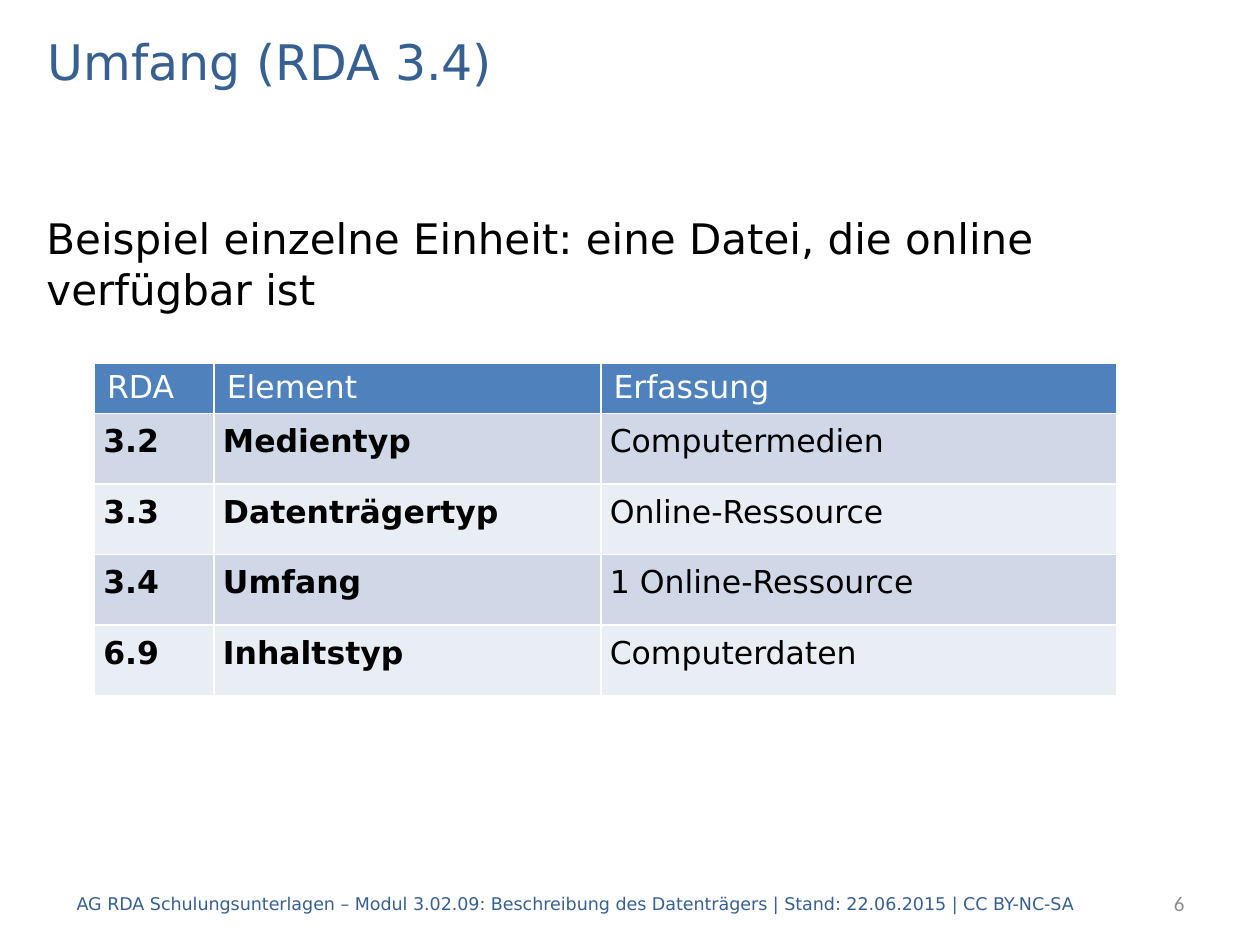
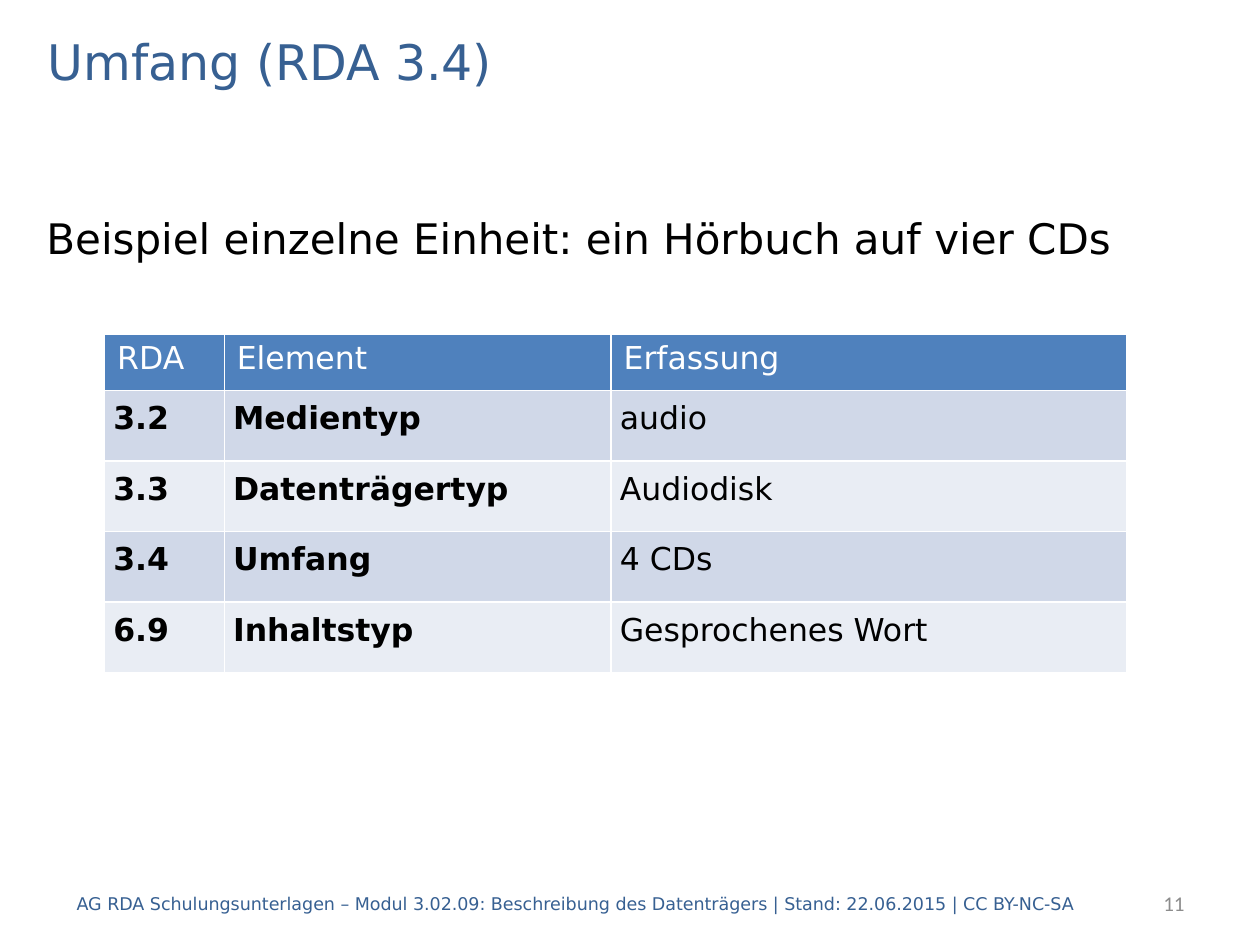
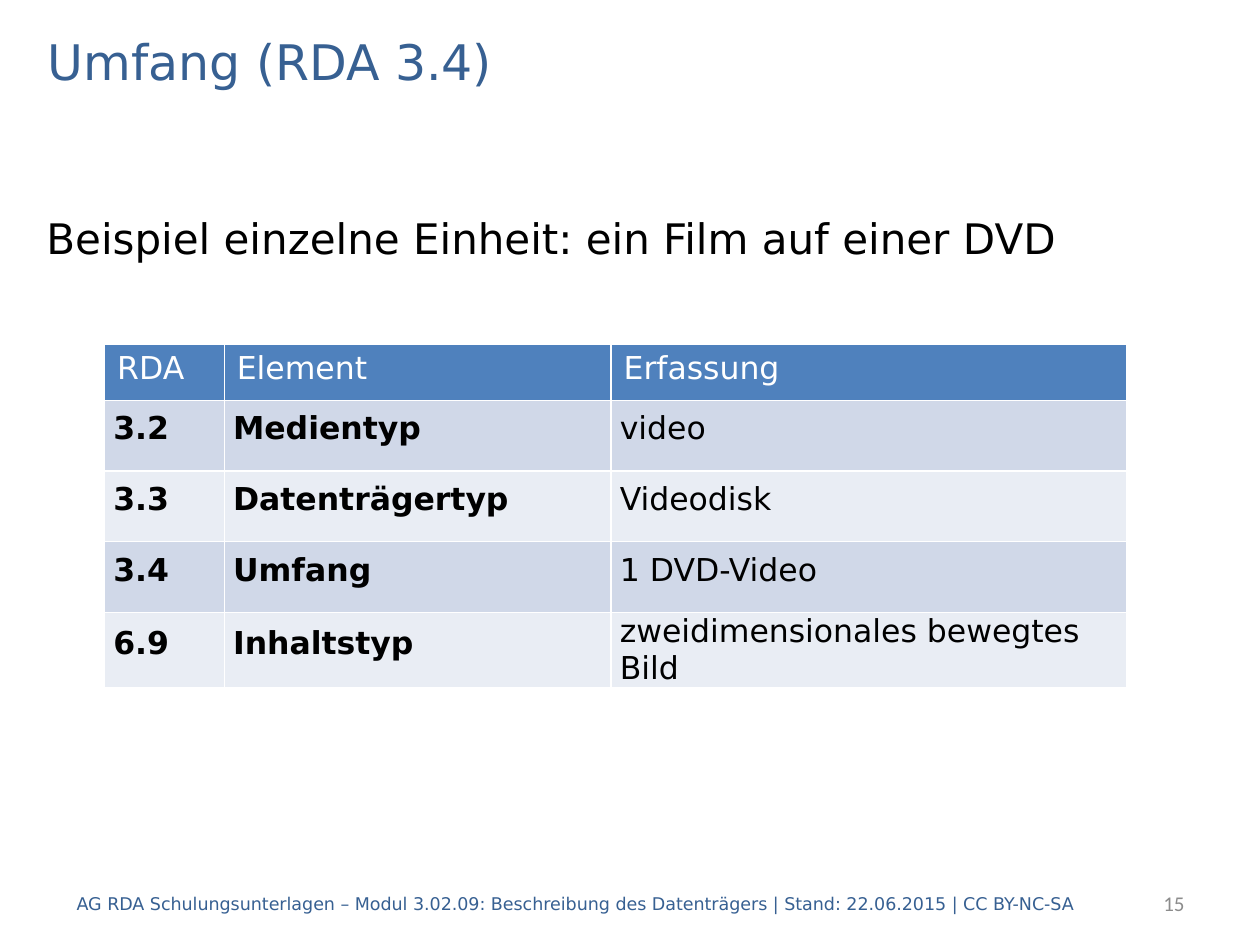
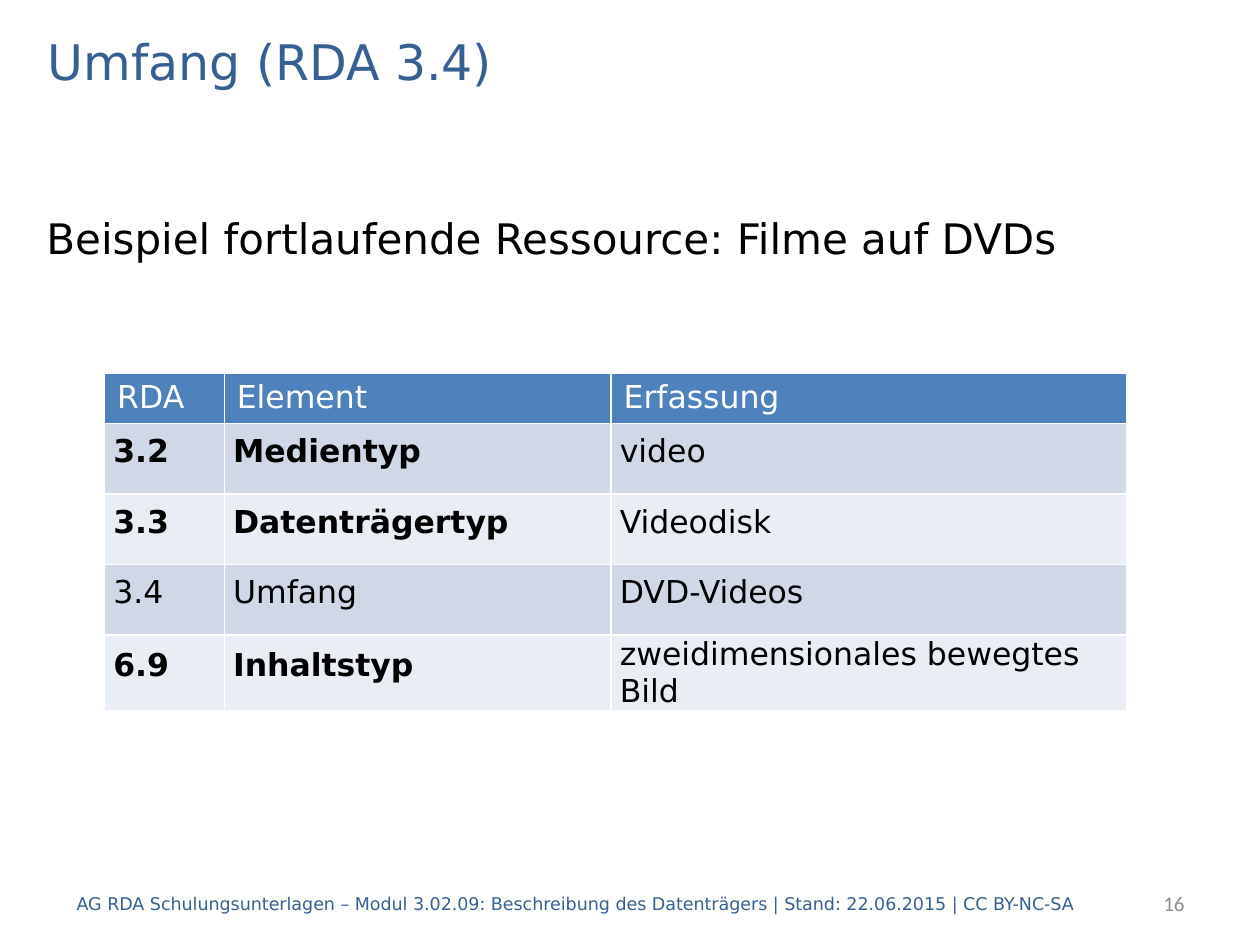
from lxml.etree import SubElement
from pptx import Presentation
from pptx.dml.color import RGBColor
from pptx.enum.text import MSO_ANCHOR as Anchor, MSO_AUTO_SIZE as AutoSize, PP_ALIGN as Align
from pptx.oxml.ns import qn
from pptx.util import Inches, Pt

TITLE = "Umfang (RDA 3.4)"
FOOTER = ("AG RDA Schulungsunterlagen – Modul 3.02.09: Beschreibung des Datenträgers"
          " | Stand: 22.06.2015 | CC BY-NC-SA")
HEADINGS = ("RDA", "Element", "Erfassung")
ELEMENTS = (("3.2", "Medientyp"), ("3.3", "Datenträgertyp"),
            ("3.4", "Umfang"), ("6.9", "Inhaltstyp"))
COLUMN_WIDTHS = (0.95, 3.07, 4.09)
ROW_HEIGHT = 0.56
MOVING_IMAGE = "zweidimensionales bewegtes Bild"

EXAMPLES = (
    dict(number=6, topic="Beispiel einzelne Einheit: eine Datei, die online verfügbar ist",
         left=0.75, top=2.88, header_height=0.39,
         entries=("Computermedien", "Online-Ressource", "1 Online-Ressource", "Computerdaten")),
    dict(number=11, topic="Beispiel einzelne Einheit: ein Hörbuch auf vier CDs",
         left=0.83, top=2.65, header_height=0.45,
         entries=("audio", "Audiodisk", "4 CDs", "Gesprochenes Wort")),
    dict(number=15, topic="Beispiel einzelne Einheit: ein Film auf einer DVD",
         left=0.83, top=2.73, header_height=0.45,
         entries=("video", "Videodisk", "1 DVD-Video", MOVING_IMAGE)),
    dict(number=16, topic="Beispiel fortlaufende Ressource: Filme auf DVDs",
         left=0.83, top=2.96, header_height=0.39, optional=("3.4",),
         entries=("video", "Videodisk", "DVD-Videos", MOVING_IMAGE)),
)


def rgb(value):
    """Turn a hex string into a colour."""
    return RGBColor.from_string(value)


class Deck:
    """Hold the shared style and the slide being built."""

    FONT, NUMBER_FONT = "DejaVu Sans", "Calibri"
    ACCENT, BODY, WHITE, MUTED = "376092", "000000", "FFFFFF", "8C8C8C"
    HEADER_FILL, BANDS = "4F81BD", ("D0D8E8", "E9EDF4")

    def __init__(self):
        """Start an empty 4:3 presentation."""
        self.prs = Presentation()
        self.prs.slide_width, self.prs.slide_height = Inches(10), Inches(7.5)
        self.slide = None

    def set_text(self, frame, text, size, color, bold=False, font=FONT, align=Align.LEFT):
        """Put one styled paragraph into a text frame."""
        frame.text = text
        paragraph = frame.paragraphs[0]
        paragraph.alignment = align
        paragraph.font.name, paragraph.font.size = font, Pt(size)
        paragraph.font.bold = bold
        paragraph.font.color.rgb = rgb(color)
        return paragraph

    def text_box(self, left, top, width, height, anchor=Anchor.MIDDLE):
        """Add a wrapping text box and return its frame."""
        frame = self.slide.shapes.add_textbox(
            Inches(left), Inches(top), Inches(width), Inches(height)).text_frame
        frame.word_wrap = True
        frame.vertical_anchor = anchor
        return frame

    def new_slide(self, title, footer, number):
        """Add a slide with its title, footer and number."""
        self.slide = self.prs.slides.add_slide(self.prs.slide_layouts[5])
        heading = self.slide.shapes.title
        heading.left, heading.top = Inches(0.28), Inches(0.2)
        heading.width, heading.height = Inches(9.45), Inches(0.56)
        heading.text_frame.auto_size = AutoSize.NONE
        heading.text_frame.vertical_anchor = Anchor.MIDDLE
        self.set_text(heading.text_frame, title, 28, self.ACCENT)
        self.set_text(self.text_box(0.51, 6.97, 8.66, 0.4), footer, 10, self.ACCENT)
        self.set_text(self.text_box(7.91, 6.97, 1.59, 0.4), str(number), 12, self.MUTED,
                      font=self.NUMBER_FONT, align=Align.RIGHT)

    def bullet(self, text):
        """Add the bulleted topic line."""
        frame = self.text_box(0.27, 0.92, 9.45, 5.98, Anchor.TOP)
        frame.margin_top = Inches(0.77)
        properties = frame.paragraphs[0]._p.get_or_add_pPr()
        properties.set("marL", str(Inches(0.38)))
        properties.set("indent", str(-Inches(0.38)))
        SubElement(properties, qn("a:buChar"), char="•")
        self.set_text(frame, text, 24, self.BODY)

    def paint(self, cell, color):
        """Give a cell white borders and a solid fill."""
        properties = cell._tc.get_or_add_tcPr()
        for side in "LRTB":
            line = SubElement(properties, qn(f"a:ln{side}"), w=str(Pt(1)))
            SubElement(SubElement(line, qn("a:solidFill")), qn("a:srgbClr"), val=self.WHITE)
        cell.fill.solid()
        cell.fill.fore_color.rgb = rgb(color)

    def body_cell(self, cell, text, bold, color):
        """Fill one cell below the header."""
        self.paint(cell, color)
        cell.vertical_anchor = Anchor.MIDDLE
        cell.margin_left = cell.margin_right = Inches(0.07)
        cell.margin_top = cell.margin_bottom = 0
        paragraph = self.set_text(cell.text_frame, text, 18, self.BODY, bold)
        paragraph.space_after = Pt(6)
        if text != MOVING_IMAGE:
            paragraph.line_spacing = Pt(13)

    def element_table(self, left, top, header_height, entries, optional=()):
        """Add the table of RDA elements with their recorded values."""
        height = header_height + ROW_HEIGHT * len(ELEMENTS)
        table = self.slide.shapes.add_table(
            len(ELEMENTS) + 1, len(HEADINGS), Inches(left), Inches(top),
            Inches(sum(COLUMN_WIDTHS)), Inches(height)).table
        table.horz_banding = False
        for column, width in zip(table.columns, COLUMN_WIDTHS):
            column.width = Inches(width)
        table.rows[0].height = Inches(header_height)
        for cell, heading in zip(table.rows[0].cells, HEADINGS):
            self.paint(cell, self.HEADER_FILL)
            self.set_text(cell.text_frame, heading, 18, self.WHITE)
        for index, ((rule, element), entry) in enumerate(zip(ELEMENTS, entries)):
            row = table.rows[index + 1]
            row.height = Inches(ROW_HEIGHT)
            core = rule not in optional
            for cell, text, bold in zip(row.cells, (rule, element, entry), (core, core, False)):
                self.body_cell(cell, text, bold, self.BANDS[index % 2])


def main():
    """Build and save the example slides."""
    deck = Deck()
    for example in EXAMPLES:
        deck.new_slide(TITLE, FOOTER, example["number"])
        deck.bullet(example["topic"])
        deck.element_table(example["left"], example["top"], example["header_height"],
                           example["entries"], example.get("optional", ()))
    deck.prs.save("out.pptx")


if __name__ == "__main__":
    main()
